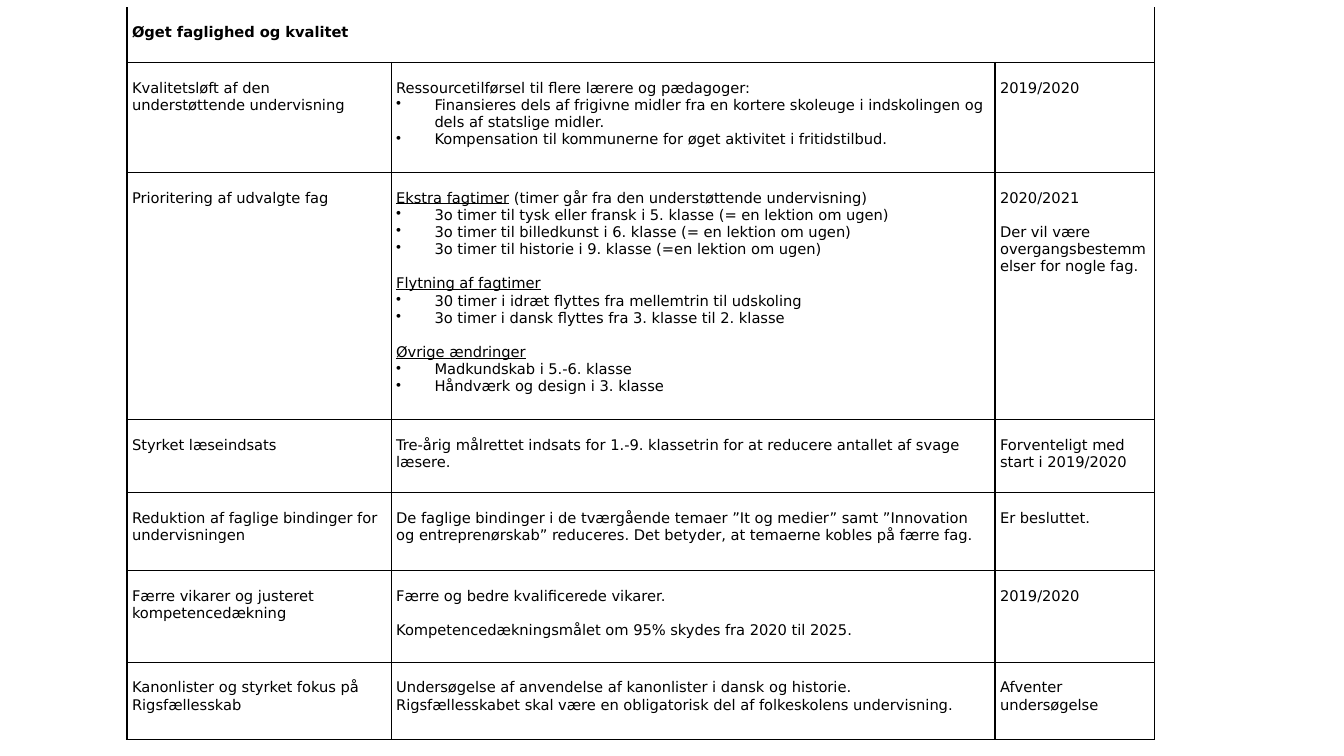
from pptx import Presentation
from pptx.dml.color import RGBColor
from pptx.enum.text import MSO_ANCHOR
from pptx.oxml.ns import qn
from pptx.util import Inches, Pt
from lxml import etree

TOP = MSO_ANCHOR.TOP
BLACK = "000000"
LINE_GAP = Pt(12.3)
BULLET_INDENT = Inches(0.38)
COLUMN_WIDTHS = [2.62, 5.99, 1.58]
ROW_HEIGHTS = [0.55, 1.09, 2.45, 0.73, 0.77, 0.91, 0.77]
CELL_FORMAT = {
    "margin_left": Inches(0.05),
    "margin_right": Inches(0.05),
    "margin_top": Inches(0.17),
    "margin_bottom": 0,
    "vertical_anchor": TOP,
}
FONT_FORMAT = {"name": "DejaVu Sans", "size": Pt(10.5)}


def plain(text, gap=False):
    return {"runs": [(text, False)], "gap": gap, "bullet": False}


def heading(text, rest="", gap=False):
    runs = [(text, True)] + ([(rest, False)] if rest else [])
    return {"runs": runs, "gap": gap, "bullet": False}


def bullet(text):
    return {"runs": [(text, False)], "gap": False, "bullet": True}


TITLE = plain("Øget faglighed og kvalitet")
ROWS = [
    [
        [plain("Kvalitetsløft af den understøttende undervisning")],
        [
            plain("Ressourcetilførsel til flere lærere og pædagoger:"),
            bullet("Finansieres dels af frigivne midler fra en kortere skoleuge "
                   "i indskolingen og dels af statslige midler."),
            bullet("Kompensation til kommunerne for øget aktivitet i fritidstilbud."),
        ],
        [plain("2019/2020")],
    ],
    [
        [plain("Prioritering af udvalgte fag")],
        [
            heading("Ekstra fagtimer", " (timer går fra den understøttende undervisning)"),
            bullet("3o timer til tysk eller fransk i 5. klasse (= en lektion om ugen)"),
            bullet("3o timer til billedkunst i 6. klasse (= en lektion om ugen)"),
            bullet("3o timer til historie i 9. klasse (=en lektion om ugen)"),
            heading("Flytning af fagtimer", gap=True),
            bullet("30 timer i idræt flyttes fra mellemtrin til udskoling"),
            bullet("3o timer i dansk flyttes fra 3. klasse til 2. klasse"),
            heading("Øvrige ændringer", gap=True),
            bullet("Madkundskab i 5.-6. klasse"),
            bullet("Håndværk og design i 3. klasse"),
        ],
        [
            plain("2020/2021"),
            plain("Der vil være overgangsbestemmelser for nogle fag.", gap=True),
        ],
    ],
    [
        [plain("Styrket læseindsats")],
        [plain("Tre-årig målrettet indsats for 1.-9. klassetrin for at reducere "
               "antallet af svage læsere.")],
        [plain("Forventeligt med start i 2019/2020")],
    ],
    [
        [plain("Reduktion af faglige bindinger for undervisningen")],
        [plain("De faglige bindinger i de tværgående temaer ”It og medier” samt "
               "”Innovation og entreprenørskab” reduceres. Det betyder, at temaerne "
               "kobles på færre fag.")],
        [plain("Er besluttet.")],
    ],
    [
        [plain("Færre vikarer og justeret kompetencedækning")],
        [
            plain("Færre og bedre kvalificerede vikarer."),
            plain("Kompetencedækningsmålet om 95% skydes fra 2020 til 2025.", gap=True),
        ],
        [plain("2019/2020")],
    ],
    [
        [plain("Kanonlister og styrket fokus på Rigsfællesskab")],
        [
            plain("Undersøgelse af anvendelse af kanonlister i dansk og historie."),
            plain("Rigsfællesskabet skal være en obligatorisk del af folkeskolens "
                  "undervisning."),
        ],
        [plain("Afventer undersøgelse")],
    ],
]


def color(hex_string):
    return RGBColor.from_string(hex_string)


def set_attributes(target, values):
    for name, value in values.items():
        setattr(target, name, value)


def set_borders(cell, visible_sides):
    properties = cell._tc.get_or_add_tcPr()
    for position, side in enumerate("LRTB"):
        line = etree.Element(qn(f"a:ln{side}"), w=str(Pt(1)))
        if side in visible_sides:
            fill = etree.SubElement(line, qn("a:solidFill"))
            etree.SubElement(fill, qn("a:srgbClr"), val=BLACK)
        else:
            etree.SubElement(line, qn("a:noFill"))
        properties.insert(position, line)


def add_bullet(paragraph):
    properties = paragraph._p.get_or_add_pPr()
    properties.set("marL", str(BULLET_INDENT))
    properties.set("indent", str(-BULLET_INDENT))
    etree.SubElement(properties, qn("a:buChar"), char="•")


def write_cell(cell, content, bold=False):
    text_frame = cell.text_frame
    for index, item in enumerate(content):
        paragraph = text_frame.add_paragraph() if index else text_frame.paragraphs[0]
        if item["gap"]:
            paragraph.space_before = LINE_GAP
        if item["bullet"]:
            add_bullet(paragraph)
        for text, underline in item["runs"]:
            run = paragraph.add_run()
            run.text = text
            set_attributes(run.font, {**FONT_FORMAT, "bold": bold, "underline": underline})
            run.font.color.rgb = color(BLACK)


def add_plan_table(slide):
    frame = slide.shapes.add_table(
        len(ROW_HEIGHTS), len(COLUMN_WIDTHS), Inches(1.26), Inches(0.07),
        Inches(sum(COLUMN_WIDTHS)), Inches(sum(ROW_HEIGHTS)))
    table = frame.table
    set_attributes(table, {"first_row": False, "horz_banding": False})
    for column, width in zip(table.columns, COLUMN_WIDTHS):
        column.width = Inches(width)
    for row_index, (row, height) in enumerate(zip(table.rows, ROW_HEIGHTS)):
        row.height = Inches(height)
        for cell in row.cells:
            set_attributes(cell, CELL_FORMAT)
            cell.fill.background()
            set_borders(cell, "LRTB" if row_index else "LRB")
    return table


def main():
    presentation = Presentation()
    presentation.slide_width = Inches(13.33)
    presentation.slide_height = Inches(7.5)
    slide = presentation.slides.add_slide(presentation.slide_layouts[6])
    table = add_plan_table(slide)

    # Heading row across all columns
    table.cell(0, 0).merge(table.cell(0, len(COLUMN_WIDTHS) - 1))
    write_cell(table.cell(0, 0), [TITLE], bold=True)

    # Initiatives: name, content and start
    for row_index, row in enumerate(ROWS, start=1):
        for column_index, content in enumerate(row):
            write_cell(table.cell(row_index, column_index), content)

    presentation.save("out.pptx")


if __name__ == "__main__":
    main()
